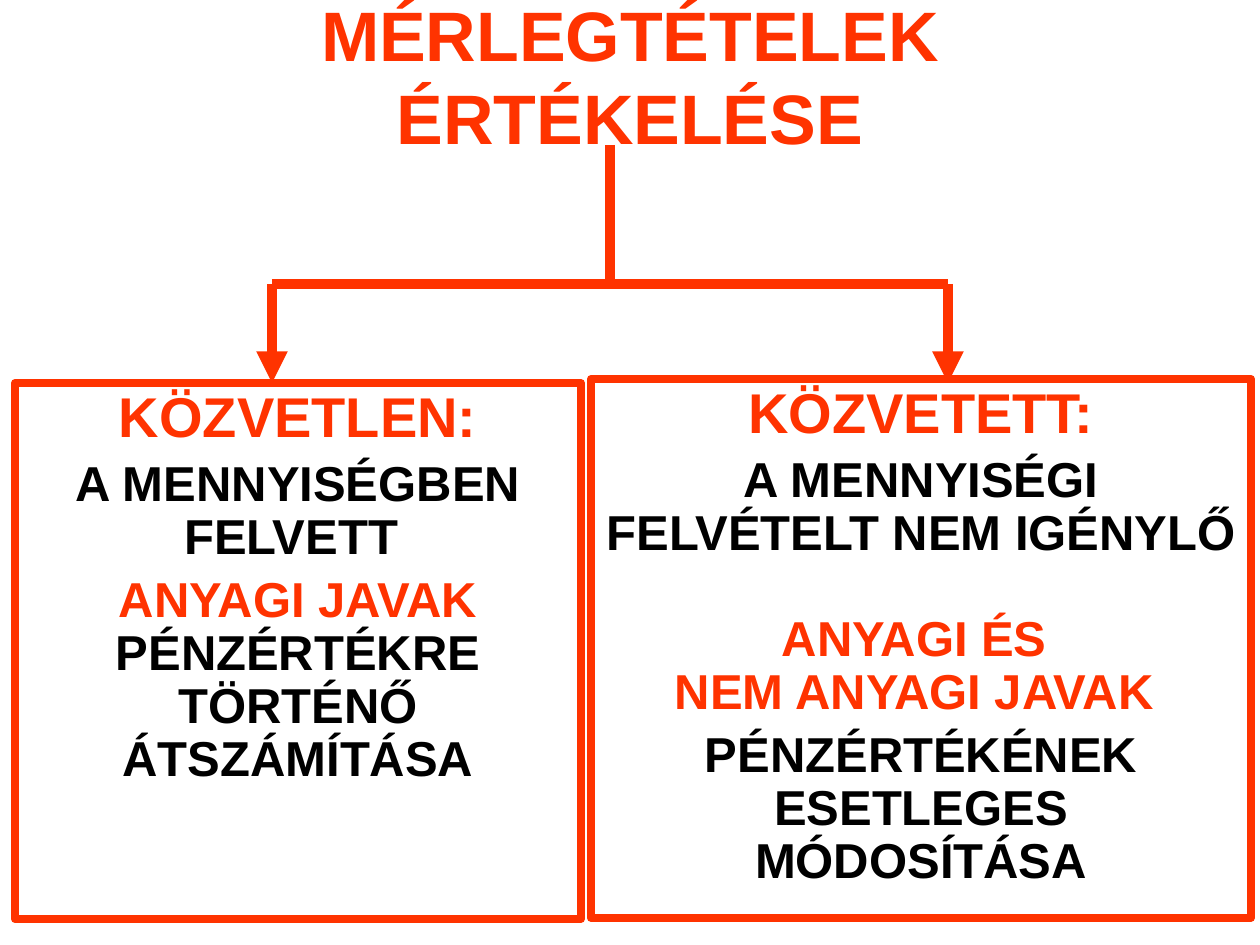
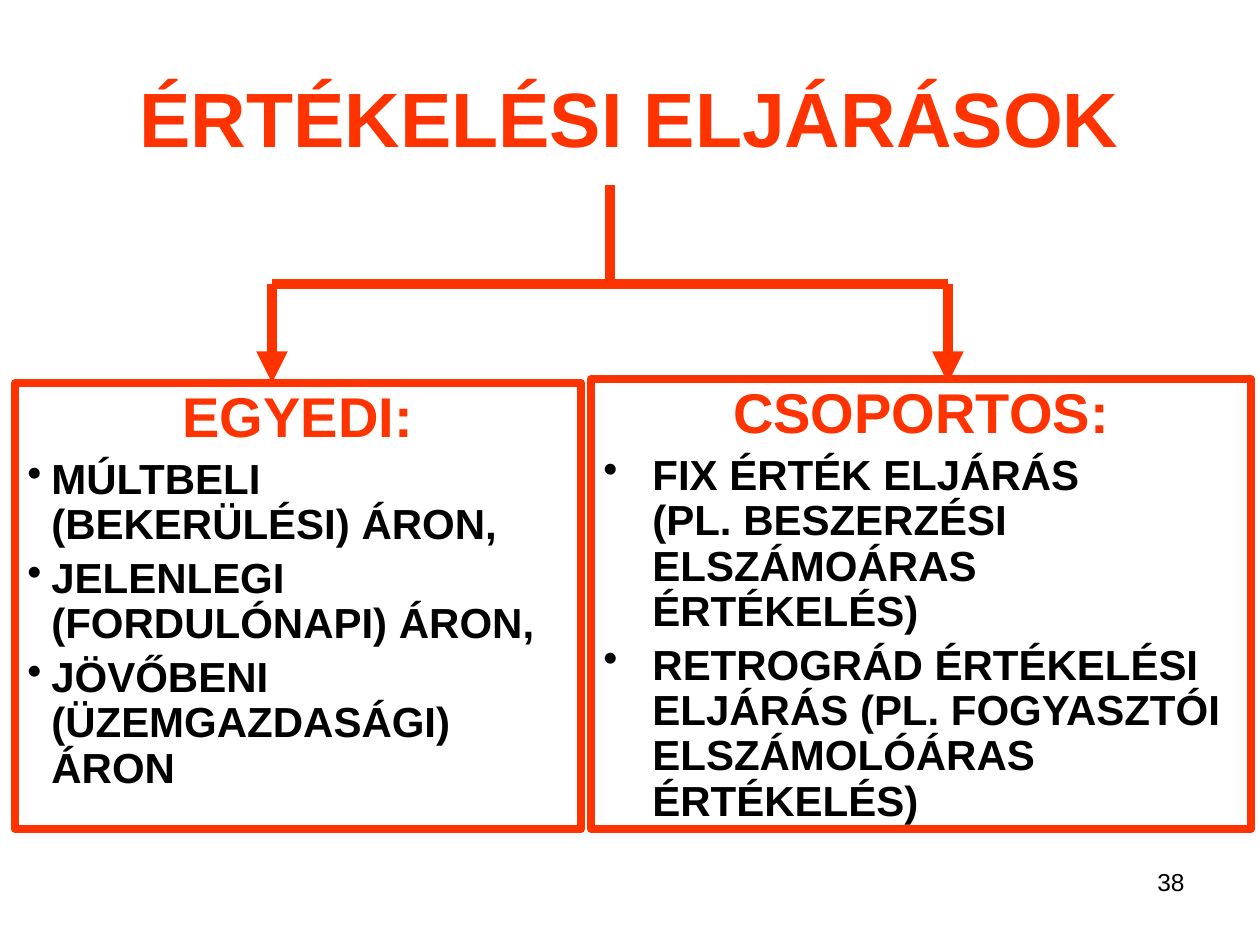
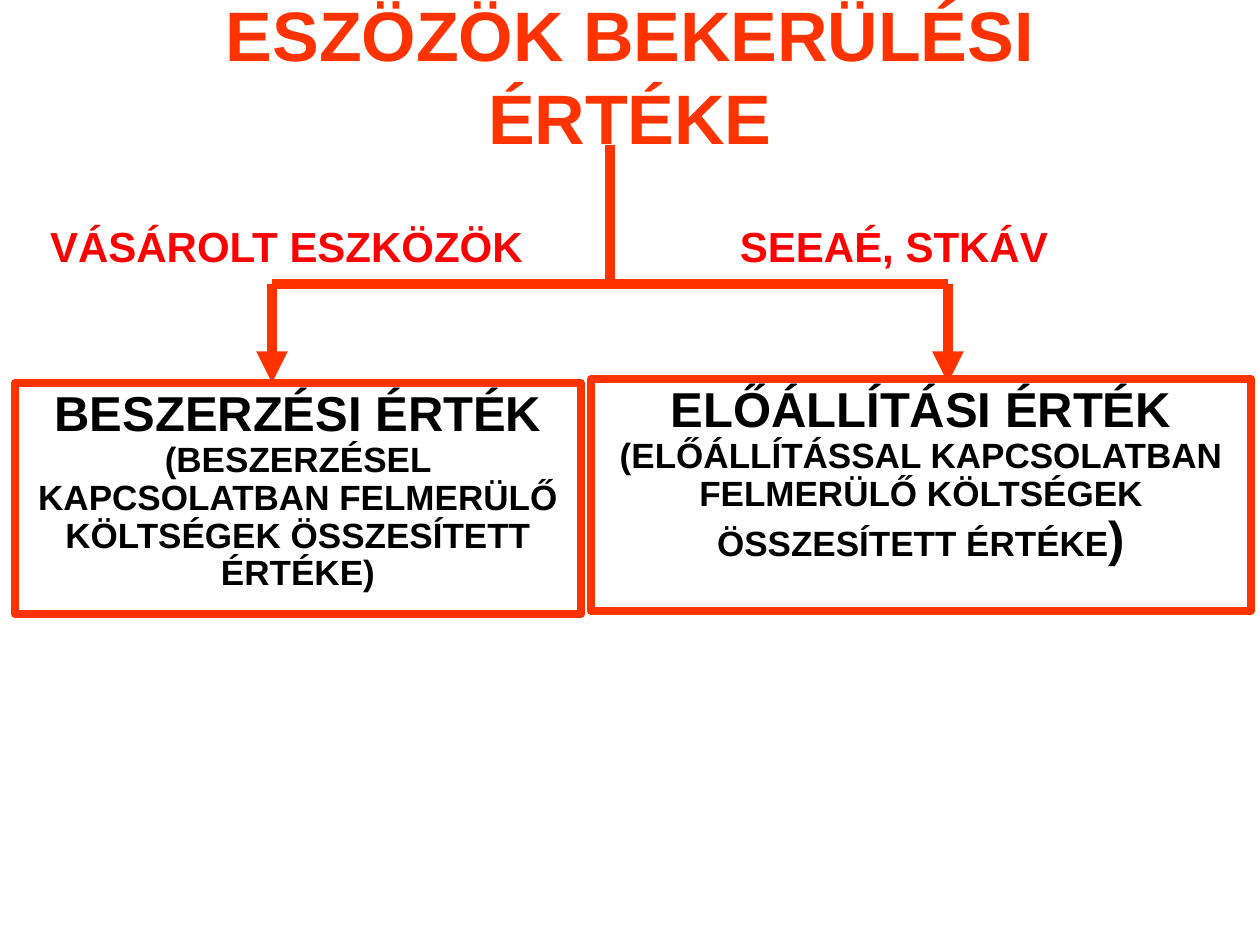
from copy import deepcopy

from lxml import etree
from pptx import Presentation
from pptx import util as u
from pptx.dml.color import RGBColor
from pptx.enum import shapes, text
from pptx.oxml.ns import qn

PX = 914400 / 126  # EMU in one px, 126 px to the inch
FONT = "Arial"
COLORS = {"accent": "FF3300", "label": "FF0000", "ink": "000000", "paper": "FFFFFF"}

TITLE_X, TITLE_W, TITLE_H = 63, 1134, 158
LEFT_BOX, RIGHT_BOX = (15, 383, 566), (591, 379, 660)  # left, top, width
STEM_X, LEFT_X, RIGHT_X = 610, 272, 948
BRANCH_Y, ARROW_Y = 284, 383
LABEL_Y, LABEL_H = 214, 63

CENTER, LEFT, RIGHT = text.PP_ALIGN.CENTER, text.PP_ALIGN.LEFT, text.PP_ALIGN.RIGHT


def px(n):
    return u.Emu(round(n * PX))


def rgb(name):
    return RGBColor.from_string(COLORS[name])


class Deck:
    """Holds the shared style and the current slide."""

    def __init__(self):
        self.prs = Presentation()
        self.prs.slide_width, self.prs.slide_height = px(1260), px(945)
        self.s = None

    def slide(self):
        self.s = self.prs.slides.add_slide(self.prs.slide_layouts[6])

    def runs(self, p, runs, bold=True):
        """Each run is (text, size, colour); a newline is a line break."""
        for words, size, color in runs:
            for i, line in enumerate(words.split("\n")):
                if i:
                    br = p._p.add_br()
                    br.append(deepcopy(r._r.rPr))
                if line:
                    r = p.add_run()
                    r.text = line
                    f = r.font
                    f.name, f.size, f.bold = FONT, u.Pt(size), bold
                    f.color.rgb = rgb(color)

    def label(self, x, y, w, h, words, size, color, wrap=False):
        tf = self.s.shapes.add_textbox(px(x), px(y), px(w), px(h)).text_frame
        tf.word_wrap = wrap
        tf.paragraphs[0].alignment = CENTER
        self.runs(tf.paragraphs[0], [(words, size, color)])
        return tf

    def title(self, words, y=-4, size=40):
        tf = self.label(TITLE_X, y, TITLE_W, TITLE_H, words, size, "accent", wrap=True)
        tf.vertical_anchor = text.MSO_ANCHOR.MIDDLE

    def rect(self, x, y, w, h):
        sp = self.s.shapes.add_shape(shapes.MSO_SHAPE.RECTANGLE, px(x), px(y), px(w), px(h))
        sp.shadow.inherit = False
        sp.text_frame.word_wrap = True
        sp.text_frame.vertical_anchor = text.MSO_ANCHOR.TOP
        return sp

    def box(self, place, h, paragraphs, indent=0):
        """Outlined box; with an indent, every paragraph after the heading has a bullet."""
        sp = self.rect(*place, h)
        sp.fill.background()
        sp.line.color.rgb = rgb("accent")
        sp.line.width = u.Pt(4.5)
        tf = sp.text_frame
        for i, runs in enumerate(paragraphs):
            p = tf.add_paragraph() if i else tf.paragraphs[0]
            bullet = indent and i
            p.alignment = LEFT if bullet else CENTER
            p.line_spacing = 0.9
            p.space_before = u.Pt(runs[0][1] * 0.2)
            if indent:
                pPr = p._p.get_or_add_pPr()
                pPr.set("marL", str(px(indent)))
                pPr.set("indent", str(-px(indent)))
            if bullet:
                etree.SubElement(pPr, qn("a:buChar")).set("char", "•")
            self.runs(p, runs)

    def line(self, x1, y1, x2, y2, arrow=False):
        c = self.s.shapes.add_connector(
            shapes.MSO_CONNECTOR.STRAIGHT, px(x1), px(y1), px(x2), px(y2))
        c.line.color.rgb = rgb("accent")
        c.line.width = u.Pt(6)
        if arrow:
            etree.SubElement(c.line._get_or_add_ln(), qn("a:tailEnd")).set("type", "triangle")
        etree.SubElement(c._element.spPr, qn("a:effectLst"))

    def fork(self, top=145):
        self.line(STEM_X, top, STEM_X, BRANCH_Y)
        self.line(LEFT_X, BRANCH_Y, RIGHT_X, BRANCH_Y)
        for x in (LEFT_X, RIGHT_X):
            self.line(x, BRANCH_Y, x, ARROW_Y, arrow=True)

    def number(self, words):
        sp = self.rect(903, 861, 294, 66)
        sp.fill.solid()
        sp.fill.fore_color.rgb = rgb("paper")
        sp.line.fill.background()
        p = sp.text_frame.paragraphs[0]
        p.alignment = RIGHT
        self.runs(p, [(words, 14, "ink")], bold=False)


def main():
    d = Deck()

    # Valuation of balance sheet items
    d.slide()
    d.title("MÉRLEGTÉTELEK\nÉRTÉKELÉSE")
    d.box(RIGHT_BOX, 539, [
        [("KÖZVETETT:", 32, "accent")],
        [("A MENNYISÉGI FELVÉTELT NEM IGÉNYLŐ \n", 28, "ink"),
         ("ANYAGI ÉS \nNEM ANYAGI JAVAK ", 28, "accent")],
        [("PÉNZÉRTÉKÉNEK ESETLEGES MÓDOSÍTÁSA", 28, "ink")],
    ])
    d.fork()
    d.box(LEFT_BOX, 536, [
        [("KÖZVETLEN:", 32, "accent")],
        [("A MENNYISÉGBEN FELVETT ", 28, "ink")],
        [("ANYAGI JAVAK", 28, "accent"),
         (" PÉNZÉRTÉKRE TÖRTÉNŐ ÁTSZÁMÍTÁSA", 28, "ink")],
    ])

    # Valuation procedures
    d.slide()
    d.number("38")
    d.title("ÉRTÉKELÉSI ELJÁRÁSOK", y=38, size=44)
    d.box(LEFT_BOX, 446, [
        [("EGYEDI:", 32, "accent")],
        [("MÚLTBELI (BEKERÜLÉSI) ÁRON,", 24, "ink")],
        [("JELENLEGI (FORDULÓNAPI) ÁRON,", 24, "ink")],
        [("JÖVŐBENI (ÜZEMGAZDASÁGI) ÁRON", 24, "ink")],
    ], indent=24)
    d.box(RIGHT_BOX, 450, [
        [("CSOPORTOS:", 32, "accent")],
        [("FIX ÉRTÉK ELJÁRÁS \n(PL. BESZERZÉSI ELSZÁMOÁRAS ÉRTÉKELÉS)", 24, "ink")],
        [("RETROGRÁD ÉRTÉKELÉSI ELJÁRÁS (PL. FOGYASZTÓI ELSZÁMOLÓÁRAS ÉRTÉKELÉS)",
          24, "ink")],
    ], indent=49)
    d.fork(top=185)

    # Acquisition value of assets
    d.slide()
    d.title("ESZÖZÖK BEKERÜLÉSI ÉRTÉKE")
    d.box(LEFT_BOX, 231, [
        [("BESZERZÉSI ÉRTÉK\n", 28, "ink"),
         ("(BESZERZÉSEL KAPCSOLATBAN FELMERÜLŐ KÖLTSÉGEK ÖSSZESÍTETT ÉRTÉKE)", 20, "ink")],
    ])
    d.box(RIGHT_BOX, 232, [
        [("ELŐÁLLÍTÁSI ÉRTÉK\n", 28, "ink"),
         ("(ELŐÁLLÍTÁSSAL KAPCSOLATBAN FELMERÜLŐ KÖLTSÉGEK ÖSSZESÍTETT ÉRTÉKE", 20, "ink"),
         (")", 28, "ink")],
    ])
    d.fork()
    for x, w, words in ((35, 503, "VÁSÁROLT ESZKÖZÖK"), (726, 336, "SEEAÉ, STKÁV")):
        d.label(x, LABEL_Y, w, LABEL_H, words, 24, "label")

    d.prs.save("out.pptx")


if __name__ == "__main__":
    main()
